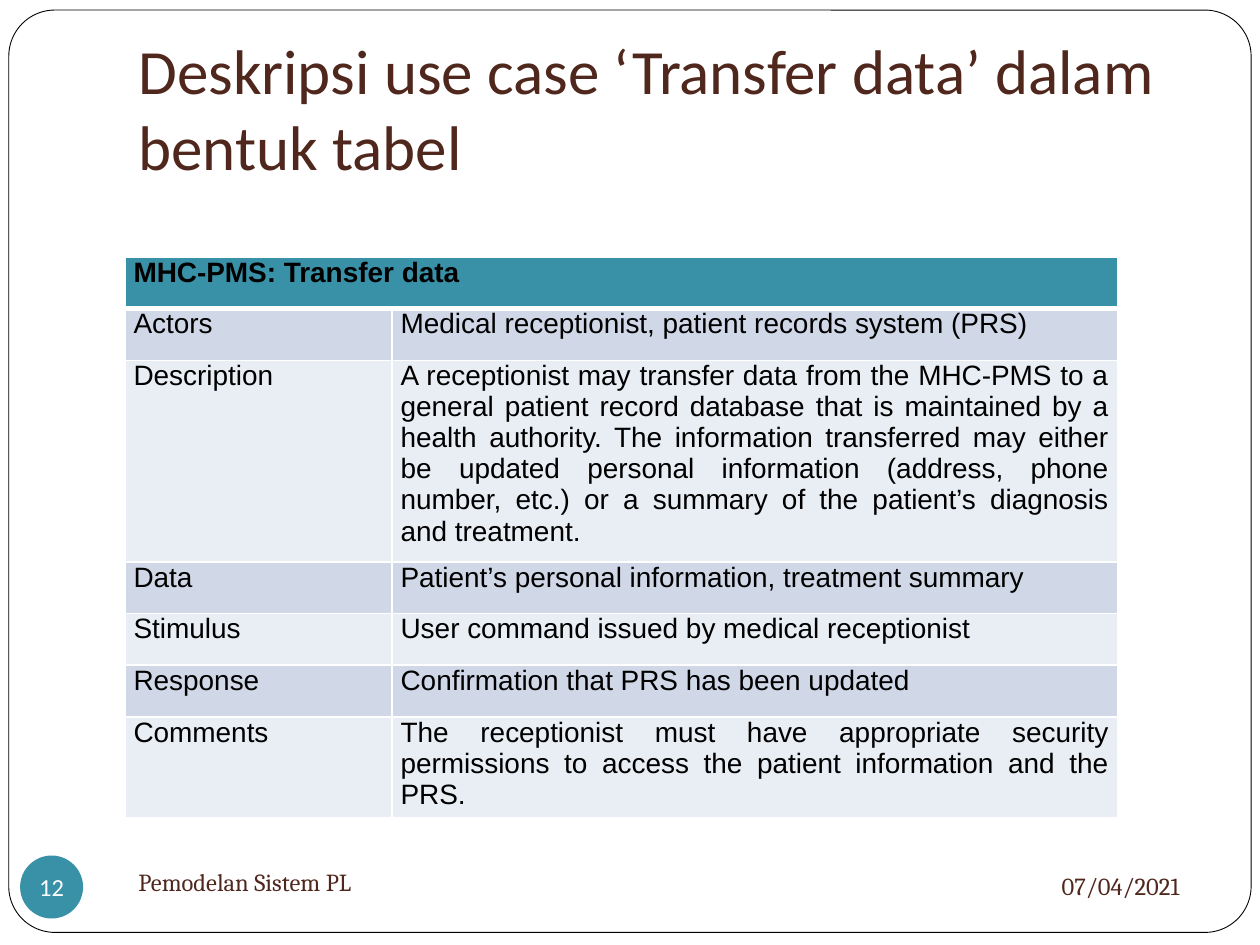
from lxml.etree import SubElement
from pptx import Presentation
from pptx.dml.color import RGBColor
from pptx.enum.shapes import MSO_SHAPE
from pptx.enum.text import MSO_ANCHOR, PP_ALIGN
from pptx.oxml.ns import qn
from pptx.util import Inches, Pt

COLORS = {
    "white": "FFFFFF",
    "black": "000000",
    "brown": "4F271C",
    "teal": "3891A7",
    "band_dark": "D0D8E8",
    "band_light": "E9EDF4",
}

USE_CASE_TITLE = "MHC-PMS: Transfer data"
USE_CASE_ROWS = [
    ("Actors", "Medical receptionist, patient records system (PRS)"),
    ("Description",
     "A receptionist may transfer data from the MHC-PMS to a general patient "
     "record database that is maintained by a health authority. The information "
     "transferred may either be updated personal information (address, phone "
     "number, etc.) or a summary of the patient’s diagnosis and treatment."),
    ("Data", "Patient’s personal information, treatment summary"),
    ("Stimulus", "User command issued by medical receptionist"),
    ("Response", "Confirmation that PRS has been updated"),
    ("Comments",
     "The receptionist must have appropriate security permissions to access "
     "the patient information and the PRS."),
]


def color(name):
    return RGBColor.from_string(COLORS[name])


class SlideBuilder:
    """Holds the style and the current slide."""

    title_font, footer_font, table_font = "Calibri", "Cambria", "Arial"
    title_size, footer_size, table_size = 36, 14, 16

    def __init__(self, slide):
        self.slide = slide

    def add_run(self, frame, text, font, size, fill, align=PP_ALIGN.LEFT, bold=False):
        paragraph = frame.paragraphs[0]
        paragraph.alignment = align
        run = paragraph.add_run()
        run.text = text
        run.font.name, run.font.size, run.font.bold = font, Pt(size), bold
        run.font.color.rgb = color(fill)

    def add_shape(self, kind, left, top, width, height, fill, line=None):
        shape = self.slide.shapes.add_shape(
            kind, Inches(left), Inches(top), Inches(width), Inches(height))
        shape.shadow.inherit = False
        shape.fill.solid()
        shape.fill.fore_color.rgb = color(fill)
        if line:
            shape.line.color.rgb = color(line)
            shape.line.width = Pt(0.5)
        else:
            shape.line.fill.background()
        return shape

    def add_text(self, left, top, width, height, text, font, size,
                 anchor=MSO_ANCHOR.MIDDLE, align=PP_ALIGN.LEFT, bottom=0.05):
        box = self.slide.shapes.add_textbox(
            Inches(left), Inches(top), Inches(width), Inches(height))
        frame = box.text_frame
        frame.word_wrap = True
        frame.vertical_anchor = anchor
        frame.margin_bottom = Inches(bottom)
        self.add_run(frame, text, font, size, "brown", align)

    def add_badge(self, left, top, size, text):
        frame = self.add_shape(
            MSO_SHAPE.OVAL, left, top, size, size, "teal").text_frame
        frame.margin_left = frame.margin_right = 0
        frame.margin_top = frame.margin_bottom = 0
        frame.word_wrap = False
        frame.vertical_anchor = MSO_ANCHOR.MIDDLE
        self.add_run(frame, text, self.title_font, self.footer_size, "white",
                     PP_ALIGN.CENTER)

    def style_cell(self, cell, fill, top=1, bottom=1):
        cell.margin_left = cell.margin_right = Inches(0.07)
        cell.margin_top = cell.margin_bottom = 0
        # Borders must come before the fill in the cell properties
        properties = cell._tc.get_or_add_tcPr()
        for tag, width in (("lnL", 1), ("lnR", 1), ("lnT", top), ("lnB", bottom)):
            line = SubElement(properties, qn(f"a:{tag}"), w=str(Pt(width)))
            solid = SubElement(line, qn("a:solidFill"))
            SubElement(solid, qn("a:srgbClr"), val=COLORS["white"])
        cell.fill.solid()
        cell.fill.fore_color.rgb = color(fill)

    def add_table(self, left, top, widths, row_height, heading, rows):
        count = len(rows) + 1
        table = self.slide.shapes.add_table(
            count, len(widths), Inches(left), Inches(top),
            Inches(sum(widths)), Inches(row_height * count)).table
        for column, width in zip(table.columns, widths):
            column.width = Inches(width)
        for row in table.rows:
            row.height = Inches(row_height)

        # Heading row across all columns
        table.cell(0, 0).merge(table.cell(0, len(widths) - 1))
        for cell in table.rows[0].cells:
            self.style_cell(cell, "teal", bottom=3)
        self.add_run(table.cell(0, 0).text_frame, heading, self.table_font,
                     self.table_size, "black", PP_ALIGN.JUSTIFY, bold=True)

        # Banded body rows
        for index, texts in enumerate(rows, start=1):
            fill = "band_dark" if index % 2 else "band_light"
            for cell, text in zip(table.rows[index].cells, texts):
                self.style_cell(cell, fill, top=3 if index == 1 else 1)
                self.add_run(cell.text_frame, text, self.table_font,
                             self.table_size, "black", PP_ALIGN.JUSTIFY)


def main():
    presentation = Presentation()
    presentation.slide_width, presentation.slide_height = Inches(10), Inches(7.5)
    builder = SlideBuilder(
        presentation.slides.add_slide(presentation.slide_layouts[6]))

    # Rounded frame
    frame = builder.add_shape(MSO_SHAPE.ROUNDED_RECTANGLE, 0.07, 0.08, 9.86, 7.32,
                              "white", line="black")
    frame.adjustments[0] = 0.05

    # Title
    builder.add_text(1, 0.3, 8.5, 1.25,
                     "Deskripsi use case ‘Transfer data’ dalam bentuk tabel",
                     builder.title_font, builder.title_size,
                     anchor=MSO_ANCHOR.BOTTOM, bottom=0.1)

    # Use case table
    builder.add_table(0.99, 2.04, [2.12, 5.76], 0.41, USE_CASE_TITLE, USE_CASE_ROWS)

    # Footer: slide number, subject and date
    builder.add_badge(0.16, 6.79, 0.5, "12")
    builder.add_text(1, 6.75, 4.33, 0.5, "Pemodelan Sistem PL",
                     builder.footer_font, builder.footer_size)
    builder.add_text(6.75, 6.77, 2.71, 0.52, "07/04/2021",
                     builder.footer_font, builder.footer_size, align=PP_ALIGN.RIGHT)

    presentation.save("out.pptx")


if __name__ == "__main__":
    main()
